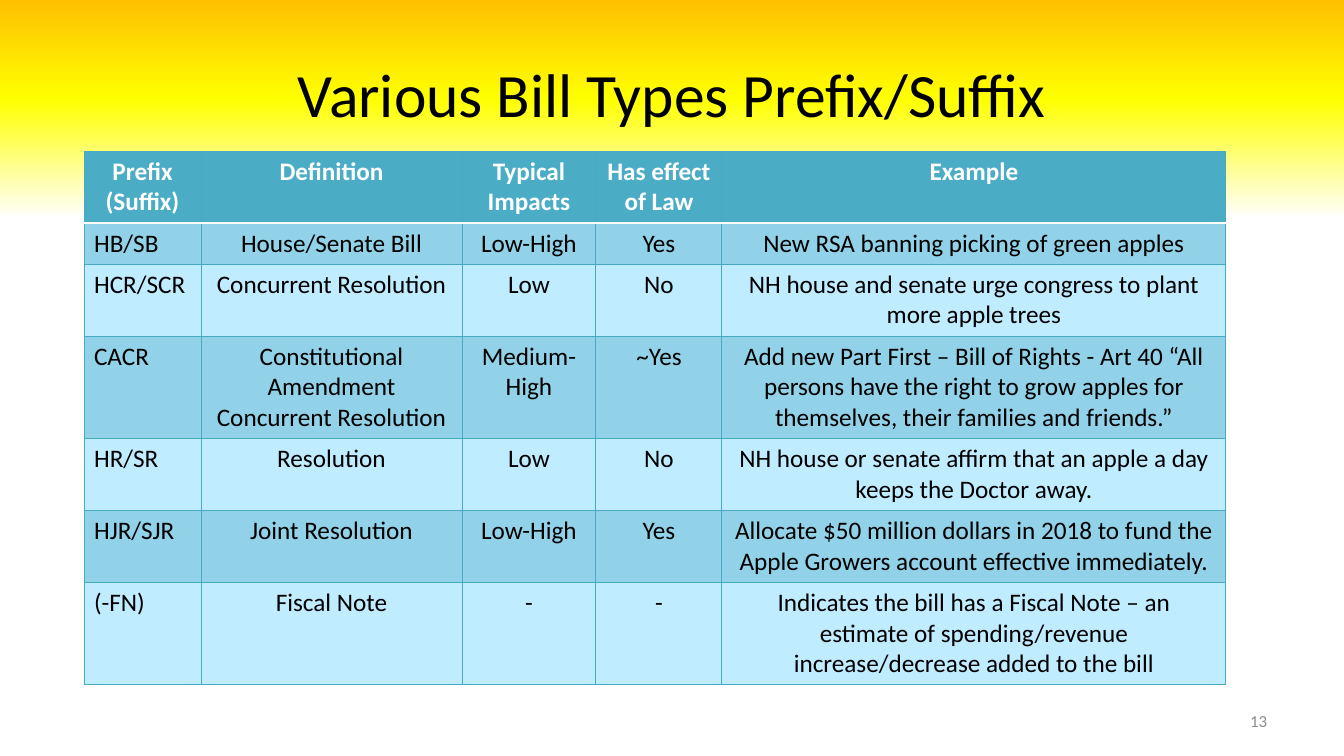
from typing import NamedTuple

from pptx import Presentation
from pptx.dml.color import RGBColor
from pptx.enum.text import MSO_ANCHOR as ANCHOR, PP_ALIGN as ALIGN
from pptx.oxml import parse_xml
from pptx.oxml.ns import nsdecls, qn
from pptx.util import Emu, Pt

FONT = "Calibri"
HEADER, BAND, PLAIN, GRID = "4BACC6", "91D2E8", "BFECFF", "46AAC5"
ROW_HEIGHTS = {1: 41, 2: 72, 3: 102}  # px, by lines of text


class Column(NamedTuple):
    heading: str
    width: int
    align: ALIGN = ALIGN.CENTER


class BillType(NamedTuple):
    prefix: str
    definition: str
    impact: str
    has_effect: str
    example: str
    lines: int


class Stop(NamedTuple):
    percent: int
    color: str


COLUMNS = [
    Column("Prefix (Suffix)", 117, ALIGN.LEFT),
    Column("Definition", 261),
    Column("Typical Impacts", 134),
    Column("Has effect of Law", 126),
    Column("Example", 504),
]
BILLS = [
    BillType("HB/SB", "House/Senate Bill", "Low-High", "Yes",
             "New RSA banning picking of green apples", 1),
    BillType("HCR/SCR", "Concurrent Resolution", "Low", "No",
             "NH house and senate urge congress to plant more apple trees", 2),
    BillType("CACR", "Constitutional Amendment Concurrent Resolution", "Medium-High", "~Yes",
             "Add new Part First – Bill of Rights - Art 40 “All persons have the right "
             "to grow apples for themselves, their families and friends.”", 3),
    BillType("HR/SR", "Resolution", "Low", "No",
             "NH house or senate affirm that an apple a day keeps the Doctor away.", 2),
    BillType("HJR/SJR", "Joint Resolution", "Low-High", "Yes",
             "Allocate $50 million dollars in 2018 to fund the Apple Growers account "
             "effective immediately.", 2),
    BillType("(-FN)", "Fiscal Note", "-", "-",
             "Indicates the bill has a Fiscal Note – an estimate of spending/revenue "
             "increase/decrease added to the bill", 3),
]
SKY = [Stop(0, "FFC000"), Stop(13, "FFFF00"), Stop(29, "FFFFFF"), Stop(61, "FFFFFF")]


def px(n: int) -> Emu:
    return Emu(round(n * 914400 / 100.8))


def rgb(color: str) -> RGBColor:
    return RGBColor.from_string(color)


def write(tf, text: str, *, size: int = 18, color: str = "000000",
          bold: bool = False, align: ALIGN = ALIGN.CENTER) -> None:
    p = tf.paragraphs[0]
    p.alignment = align
    r = p.add_run()
    r.text = text
    r.font.name, r.font.size, r.font.bold = FONT, Pt(size), bold
    r.font.color.rgb = rgb(color)


def paint_background(s, stops: list[Stop]) -> None:
    fill = s.background.fill
    fill.gradient()
    fill.gradient_angle = 270
    gs_list = s.element.find(".//" + qn("a:gsLst"))
    for old in list(gs_list):
        gs_list.remove(old)
    for stop in stops:
        gs_list.append(parse_xml(
            f'<a:gs {nsdecls("a")} pos="{stop.percent * 1000}">'
            f'<a:srgbClr val="{stop.color}"/></a:gs>'))


def set_border(cell, sides: str, color: str, width: float) -> None:
    """Draw the given sides, which must be in the order L, R, T, B, on an unbordered cell."""
    tc_pr = cell._tc.get_or_add_tcPr()
    start = len(tc_pr.findall("*"))
    for i, side in enumerate(sides):
        tc_pr.insert(start + i, parse_xml(
            f'<a:ln{side} {nsdecls("a")} w="{Pt(width)}"><a:solidFill>'
            f'<a:srgbClr val="{color}"/></a:solidFill></a:ln{side}>'))


def fill_cell(cell, text: str, fill: str, edges: list[tuple[str, str, float]], **fmt) -> None:
    for edge in edges:
        set_border(cell, *edge)
    cell.fill.solid()
    cell.fill.fore_color.rgb = rgb(fill)
    write(cell.text_frame, text, **fmt)


def add_bill_table(s, left: int, top: int) -> None:
    heights = [ROW_HEIGHTS[2]] + [ROW_HEIGHTS[bill.lines] for bill in BILLS]
    width = sum(col.width for col in COLUMNS)
    table = s.shapes.add_table(len(heights), len(COLUMNS), px(left), px(top),
                               px(width), px(sum(heights))).table
    table.horz_banding = False
    for row, height in zip(table.rows, heights):
        row.height = px(height)
    for c, col in enumerate(COLUMNS):
        table.columns[c].width = px(col.width)
        fill_cell(table.cell(0, c), col.heading, HEADER,
                  [("LRT", GRID, 0.75), ("B", "FFFFFF", 2)], color="FFFFFF", bold=True)
        for r, bill in enumerate(BILLS, 1):
            top_edge = ("T", "FFFFFF", 2) if r == 1 else ("T", GRID, 0.75)
            fill_cell(table.cell(r, c), bill[c], BAND if r % 2 else PLAIN,
                      [("LR", GRID, 0.75), top_edge, ("B", GRID, 0.75)], align=col.align)


def main() -> None:
    prs = Presentation()
    prs.slide_width, prs.slide_height = px(1344), px(756)
    s = prs.slides.add_slide(prs.slide_layouts.get_by_name("Title Only"))
    paint_background(s, SKY)

    title = s.shapes.title
    title.left, title.top, title.width, title.height = px(67), px(30), px(1210), px(126)
    title.text_frame.vertical_anchor = ANCHOR.MIDDLE
    write(title.text_frame, "Various Bill Types Prefix/Suffix", size=44)

    add_bill_table(s, 84, 151)

    number = s.shapes.add_textbox(px(964), px(701), px(313), px(40)).text_frame
    number.word_wrap = True
    number.vertical_anchor = ANCHOR.MIDDLE
    write(number, "13", size=12, color="8C8C8C", align=ALIGN.RIGHT)
    prs.save("out.pptx")


if __name__ == "__main__":
    main()
